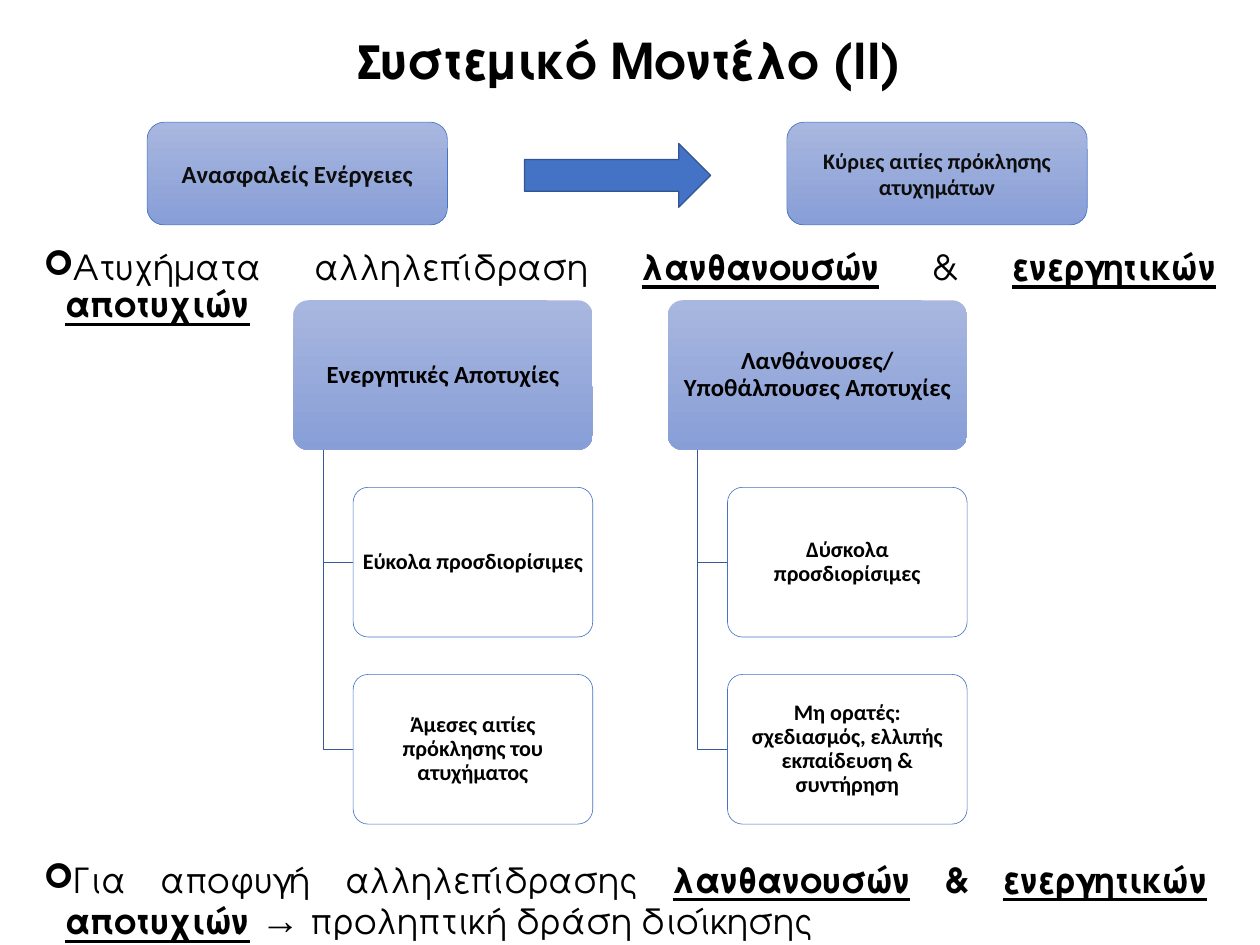
from lxml import etree
from pptx import Presentation
from pptx.dml.color import RGBColor
from pptx.enum.shapes import MSO_SHAPE
from pptx.enum.text import MSO_ANCHOR, PP_ALIGN
from pptx.oxml.ns import qn
from pptx.util import Inches, Pt

ROUNDED, ARROW = MSO_SHAPE.ROUNDED_RECTANGLE, MSO_SHAPE.RIGHT_ARROW
CENTER, JUSTIFY = PP_ALIGN.CENTER, PP_ALIGN.JUSTIFY
MIDDLE, TOP = MSO_ANCHOR.MIDDLE, MSO_ANCHOR.TOP
HEADING_FONT, BOX_FONT = "TeX Gyre Adventor", "Calibri"
WIDTH, HEIGHT = 14.22, 10.67
MARGIN = 0.39
BLUE, BRANCH_BLUE, ARROW_EDGE = "4472C4", "365B9D", "325491"
GRADIENT = ("A8B7DF", "889ED7")

presentation = Presentation()
presentation.slide_width, presentation.slide_height = Inches(WIDTH), Inches(HEIGHT)
slide = presentation.slides.add_slide(presentation.slide_layouts[6])


def write(shape, runs, align, anchor, spacing=1.0, font=BOX_FONT, color="000000"):
    """Fill a shape with one paragraph of (text, size, bold, underline) runs."""
    frame = shape.text_frame
    frame.word_wrap = True
    frame.vertical_anchor = anchor
    paragraph = frame.paragraphs[0]
    paragraph.alignment = align
    paragraph.line_spacing = spacing
    for text, size, bold, underline in runs:
        run = paragraph.add_run()
        run.text = text
        run.font.name = "Arial" if "→" in text else font
        run.font.size = Pt(size)
        run.font.bold = bold
        run.font.underline = underline
        run.font.color.rgb = RGBColor.from_string(color)
    return paragraph


def add_box(kind, left, top, width, height, fill, line=None, line_width=0.5):
    """Add a preset shape; a pair of colours gives a downward gradient."""
    shape = slide.shapes.add_shape(
        kind, Inches(left), Inches(top), Inches(width), Inches(height))
    shape.shadow.inherit = False
    if isinstance(fill, tuple):
        shape.fill.gradient()
        shape.fill.gradient_angle = 270
        for stop, color in zip(shape.fill.gradient_stops, fill):
            stop.color.rgb = RGBColor.from_string(color)
    else:
        shape.fill.solid()
        shape.fill.fore_color.rgb = RGBColor.from_string(fill)
    if line:
        shape.line.color.rgb = RGBColor.from_string(line)
        shape.line.width = Pt(line_width)
    else:
        shape.line.fill.background()
    return shape


# Title
title = slide.shapes.add_textbox(
    Inches(MARGIN), 0, Inches(WIDTH - 2 * MARGIN), Inches(1.43))
write(title, [("Συστεμικό Μοντέλο (ΙΙ)", 40, True, False)],
      CENTER, MIDDLE, 0.9, HEADING_FONT)

# Bulleted statements
statements = [
    (2.78, 13.43, 5.57, [
        ("Ατυχήματα αλληλεπίδραση ", 28, False, False),
        ("λανθανουσών", 28, True, True),
        (" ", 28, True, False),
        ("& ", 28, False, False),
        ("ενεργητικών αποτυχιών", 28, True, True)]),
    (9.7, 13.33, 0.76, [
        ("Για αποφυγή αλληλεπίδρασης ", 28, False, False),
        ("λανθανουσών", 28, True, True),
        (" & ", 28, True, False),
        ("ενεργητικών αποτυχιών", 28, True, True),
        (" ", 32, True, False),
        ("→ ", 32, True, False),
        ("προληπτική δράση διοίκησης", 28, False, False)]),
]
for top, width, height, runs in statements:
    statement = slide.shapes.add_textbox(
        Inches(MARGIN), Inches(top), Inches(width), Inches(height))
    paragraph = write(statement, runs, JUSTIFY, TOP, 0.9, HEADING_FONT)
    properties = paragraph._p.get_or_add_pPr()
    properties.set("marL", str(Inches(0.25)))
    properties.set("indent", str(-Inches(0.25)))
    etree.SubElement(properties, qn("a:buFont")).set("typeface", "Wingdings")
    etree.SubElement(properties, qn("a:buChar")).set("char", "➢")

# Cause and effect
for left, text, size in [(1.66, "Ανασφαλείς Ενέργειες", 20),
                         (8.88, "Κύριες αιτίες πρόκλησης ατυχημάτων", 18)]:
    box = add_box(ROUNDED, left, 1.38, 3.39, 1.16, GRADIENT, BLUE)
    write(box, [(text, size, True, False)], CENTER, MIDDLE, color="0D0D0D")
add_box(ARROW, 5.92, 1.62, 2.1, 0.72, BLUE, ARROW_EDGE, 1)

# Two trees of failures, all measured in node heights
NODE = 1.69
HEAD_WIDTH = 2 * NODE
ROW_STEP = 1.25 * NODE
TREE_LEFT, TREE_TOP = 3.31, 3.39
trees = [
    ("Ενεργητικές Αποτυχίες",
     ["Εύκολα προσδιορίσιμες", "Άμεσες αιτίες πρόκλησης του ατυχήματος"]),
    ("Λανθάνουσες/ Υποθάλπουσες Αποτυχίες",
     ["Δύσκολα προσδιορίσιμες",
      "Μη ορατές: σχεδιασμός, ελλιπής εκπαίδευση & συντήρηση"]),
]
for column, (head, children) in enumerate(trees):
    left = TREE_LEFT + column * 2 * ROW_STEP
    trunk, child_left = left + 0.1 * HEAD_WIDTH, left + 0.2 * HEAD_WIDTH
    for row, text in enumerate([head] + children):
        top = TREE_TOP + row * ROW_STEP
        if row == 0:
            node = add_box(ROUNDED, left, top, HEAD_WIDTH, NODE, GRADIENT)
        else:
            middle = top + NODE / 2
            builder = slide.shapes.build_freeform(
                Inches(trunk), Inches(TREE_TOP + NODE))
            builder.add_line_segments(
                [(Inches(trunk), Inches(middle)),
                 (Inches(child_left), Inches(middle))], close=False)
            branch = builder.convert_to_shape()
            branch.shadow.inherit = False
            branch.fill.background()
            branch.line.color.rgb = RGBColor.from_string(BRANCH_BLUE)
            branch.line.width = Pt(1)
            node = add_box(ROUNDED, child_left, top, 0.8 * HEAD_WIDTH, NODE,
                           "FFFFFF", BLUE)
        node.adjustments[0] = 0.1
        frame = node.text_frame
        frame.margin_left = frame.margin_right = Inches(0.04)
        frame.margin_top = frame.margin_bottom = Inches(0.03)
        write(node, [(text, 18 if row else 20, True, False)], CENTER, MIDDLE, 0.9)

presentation.save("out.pptx")
